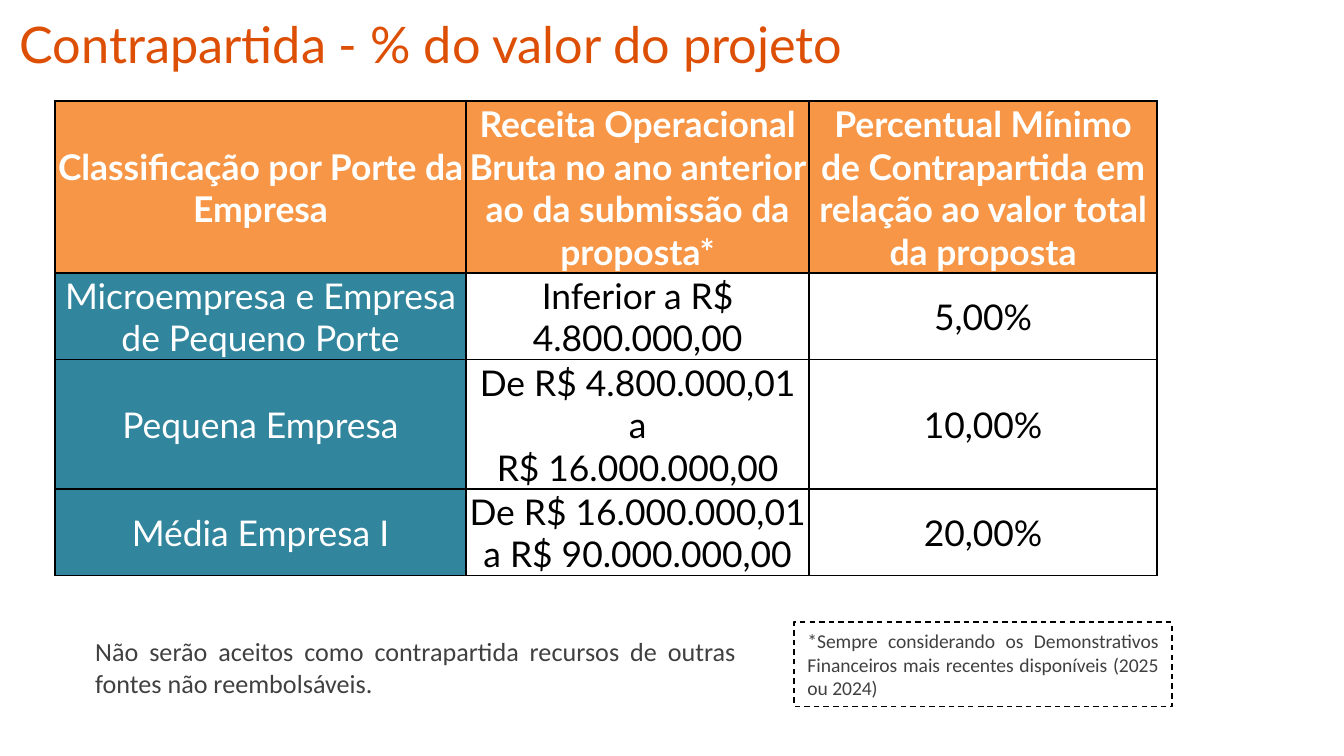
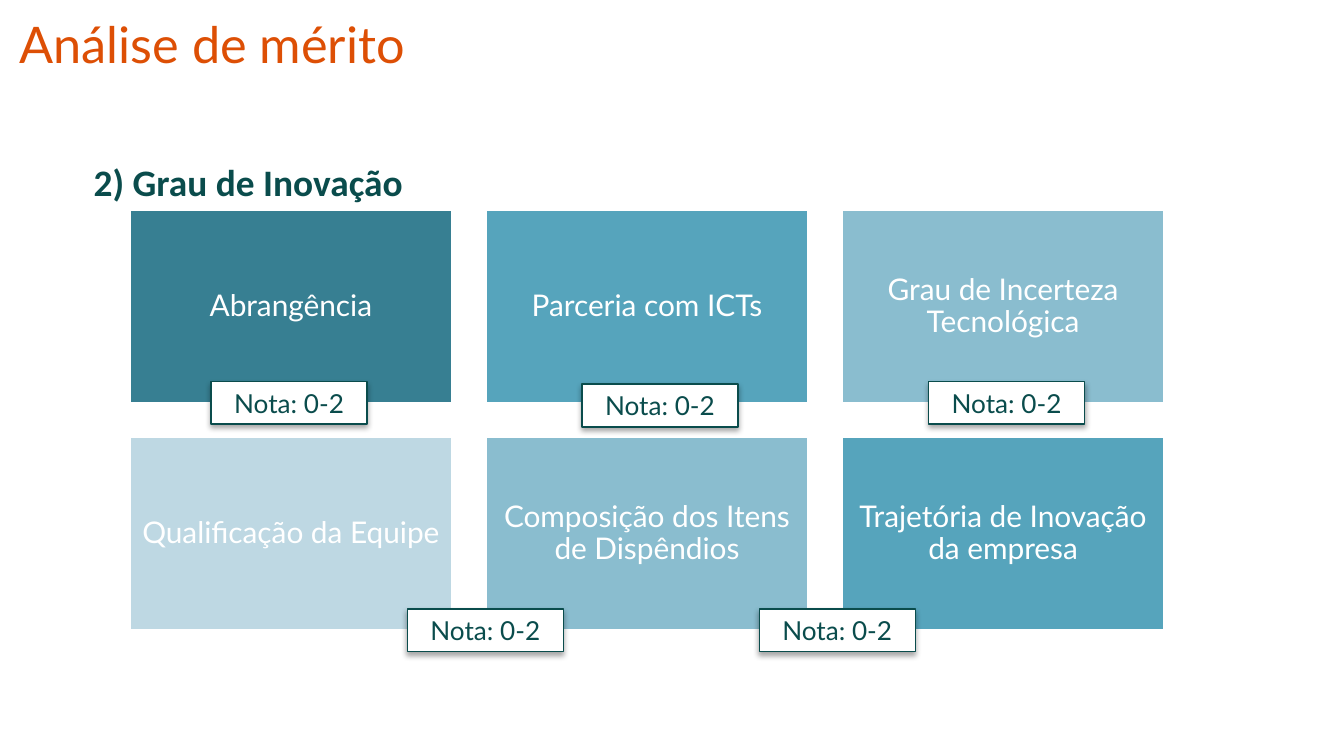
from lxml.etree import SubElement
from pptx import Presentation
from pptx.dml.color import RGBColor
from pptx.enum.dml import MSO_LINE
from pptx.enum.shapes import MSO_SHAPE
from pptx.enum.text import MSO_ANCHOR, MSO_AUTO_SIZE, PP_ALIGN
from pptx.oxml import parse_xml
from pptx.oxml.ns import nsdecls, qn
from pptx.util import Cm, Pt

COLORS = {
    "title": "DD4F05",
    "header": "F79646",
    "row_label": "31859C",
    "body": "404040",
    "dark_green": "0A4C4C",
    "white": "FFFFFF",
    "black": "000000",
    "card_deep": "377F92",
    "card_strong": "56A4BC",
    "card_soft": "8ABDCF",
    "card_pale": "BED8E3",
}
DEFAULT_INSETS = (0.25, 0.13, 0.25, 0.13)


def color(name):
    return RGBColor.from_string(COLORS[name])


def write(frame, text, size, font, ink, align=PP_ALIGN.LEFT, bold=False,
          spacing=None):
    """Fill the first paragraph; a newline in the text is a line break."""
    para = frame.paragraphs[0]
    para.alignment = align
    if spacing:
        para.line_spacing = spacing
    for index, line in enumerate(text.split("\n")):
        if index:
            para.add_line_break()
        span = para.add_run()
        span.text = line
        span.font.size = Pt(size)
        span.font.name = font
        span.font.bold = bold
        span.font.color.rgb = color(ink)
    return para


def set_frame(shape, anchor=MSO_ANCHOR.TOP, insets=DEFAULT_INSETS, grow=False):
    frame = shape.text_frame
    frame.word_wrap = True
    frame.auto_size = MSO_AUTO_SIZE.SHAPE_TO_FIT_TEXT if grow else MSO_AUTO_SIZE.NONE
    frame.vertical_anchor = anchor
    (frame.margin_left, frame.margin_top,
     frame.margin_right, frame.margin_bottom) = map(Cm, insets)
    return frame


def add_text_box(page, box, **frame_options):
    return set_frame(page.shapes.add_textbox(*map(Cm, box)), **frame_options)


def add_rectangle(page, box, fill, line, line_width):
    shape = page.shapes.add_shape(MSO_SHAPE.RECTANGLE, *map(Cm, box))
    shape.shadow.inherit = False
    if fill:
        shape.fill.solid()
        shape.fill.fore_color.rgb = color(fill)
    else:
        shape.fill.background()
    shape.line.color.rgb = color(line)
    shape.line.width = Pt(line_width)
    return shape


def add_title(page, text, width):
    frame = add_text_box(page, (0.18, 0.28, width, 1.22), anchor=MSO_ANCHOR.BOTTOM,
                         insets=(0.19, 0.1, 0.19, 0.1), grow=True)
    write(frame, text, 27, "Lato", "title", spacing=0.9)


def add_borders(cell):
    properties = cell._tc.get_or_add_tcPr()
    for index, side in enumerate(("lnL", "lnR", "lnT", "lnB")):
        properties.insert(index, parse_xml(
            f'<a:{side} {nsdecls("a")} w="12700"><a:solidFill>'
            f'<a:srgbClr val="{COLORS["black"]}"/></a:solidFill></a:{side}>'))


def fill_cell(cell, text, fill, ink, bold):
    cell.margin_left = cell.margin_top = cell.margin_right = Cm(0.03)
    cell.margin_bottom = 0
    cell.vertical_anchor = MSO_ANCHOR.MIDDLE
    if fill:
        cell.fill.solid()
        cell.fill.fore_color.rgb = color(fill)
    else:
        cell.fill.background()
    write(cell.text_frame, text, 19, "Lato", ink, PP_ALIGN.CENTER, bold)
    add_borders(cell)


def add_share_table(page, left, top):
    rows = [
        ("Classificação por Porte da Empresa",
         "Receita Operacional Bruta no ano anterior ao da submissão da proposta*",
         "Percentual Mínimo de Contrapartida em relação ao valor total da proposta"),
        ("Microempresa e Empresa de Pequeno Porte", "Inferior a R$ 4.800.000,00", "5,00%"),
        ("Pequena Empresa", "De R$ 4.800.000,01 a\nR$ 16.000.000,00", "10,00%"),
        ("Média Empresa I", "De R$ 16.000.000,01 a R$ 90.000.000,00", "20,00%"),
    ]
    widths = (7.77, 6.48, 6.58)
    heights = (3.07, 1.55, 1.55, 1.55)
    table = page.shapes.add_table(len(rows), len(widths), Cm(left), Cm(top),
                                  Cm(sum(widths)), Cm(sum(heights))).table
    for column, width in zip(table.columns, widths):
        column.width = Cm(width)
    for row, height in zip(table.rows, heights):
        row.height = Cm(height)
    for r, texts in enumerate(rows):
        for c, text in enumerate(texts):
            if r == 0:
                style = ("header", "white", True)
            elif c == 0:
                style = ("row_label", "white", False)
            else:
                style = (None, "black", False)
            fill_cell(table.cell(r, c), text, *style)


def add_funding_notes(page, left, top):
    remark = add_rectangle(page, (left + 13.46, top, 7.14, 1.6), None, "black", 0.75)
    remark.line.dash_style = MSO_LINE.DASH
    write(set_frame(remark, grow=True),
          "*Sempre considerando os Demonstrativos Financeiros mais recentes "
          "disponíveis (2025 ou 2024)",
          10.5, "Calibri", "body", PP_ALIGN.JUSTIFY)
    write(add_text_box(page, (left, top + 0.13, 12.62, 1.45), grow=True),
          "Não serão aceitos como contrapartida recursos de outras fontes "
          "não reembolsáveis.",
          14, "Calibri", "body", PP_ALIGN.JUSTIFY)


def add_criteria_cards(page, left, top):
    cards = [
        ("Abrangência", "card_deep"),
        ("Parceria com ICTs", "card_strong"),
        ("Grau de Incerteza Tecnológica", "card_soft"),
        ("Qualificação da Equipe", "card_pale"),
        ("Composição dos Itens de Dispêndios", "card_soft"),
        ("Trajetória de Inovação da empresa", "card_strong"),
    ]
    width, height, gap = 6.12, 3.68, 0.61
    for index, (text, fill) in enumerate(cards):
        row, column = divmod(index, 3)
        box = (left + column * (width + gap), top + row * (height + gap), width, height)
        card = add_rectangle(page, box, fill, "white", 2)
        frame = set_frame(card, MSO_ANCHOR.MIDDLE, (0.18,) * 4)
        write(frame, text, 16, "Lato", "white", PP_ALIGN.CENTER, spacing=0.9)


def add_soft_shadow(shape):
    effects = shape._element.spPr.find(qn("a:effectLst"))
    shadow = SubElement(effects, qn("a:outerShdw"), blurRad=str(Pt(3.1)),
                        dist=str(Pt(1.8)), dir="5400000", rotWithShape="0")
    tone = SubElement(shadow, qn("a:srgbClr"), val=COLORS["black"])
    SubElement(tone, qn("a:alpha"), val="35000")


def add_score_tags(page, left, top):
    offsets = [(1.55, 3.25), (8.56, 3.3), (15.11, 3.25), (5.26, 7.55), (11.91, 7.55)]
    for x, y in offsets:
        tag = add_rectangle(page, (left + x, top + y, 2.95, 0.81),
                            "white", "dark_green", 0.75)
        add_soft_shadow(tag)
        write(set_frame(tag, MSO_ANCHOR.MIDDLE), "Nota: 0-2", 14, "Lato",
              "dark_green", PP_ALIGN.CENTER)


def add_section_heading(page, text, box):
    para = write(add_text_box(page, box, grow=True), text, 20, "Calibri",
                 "dark_green", PP_ALIGN.JUSTIFY, bold=True)
    para.space_after = Pt(3)


def build_funding_slide(page):
    add_title(page, "Contrapartida - % do valor do projeto", 19.79)
    add_funding_notes(page, 1.55, 11.76)
    add_share_table(page, 1.04, 1.91)


def build_merit_slide(page):
    left, top = 2.44, 3.96
    add_criteria_cards(page, left, top)
    add_score_tags(page, left, top)
    add_title(page, "Análise de mérito", 21.97)
    add_section_heading(page, "2) Grau de Inovação", (1.52, 2.87, 11.18, 1.12))


def main():
    deck = Presentation()
    deck.slide_width, deck.slide_height = Cm(25.4), Cm(14.29)
    for build in (build_funding_slide, build_merit_slide):
        build(deck.slides.add_slide(deck.slide_layouts[6]))
    deck.save("out.pptx")


if __name__ == "__main__":
    main()
